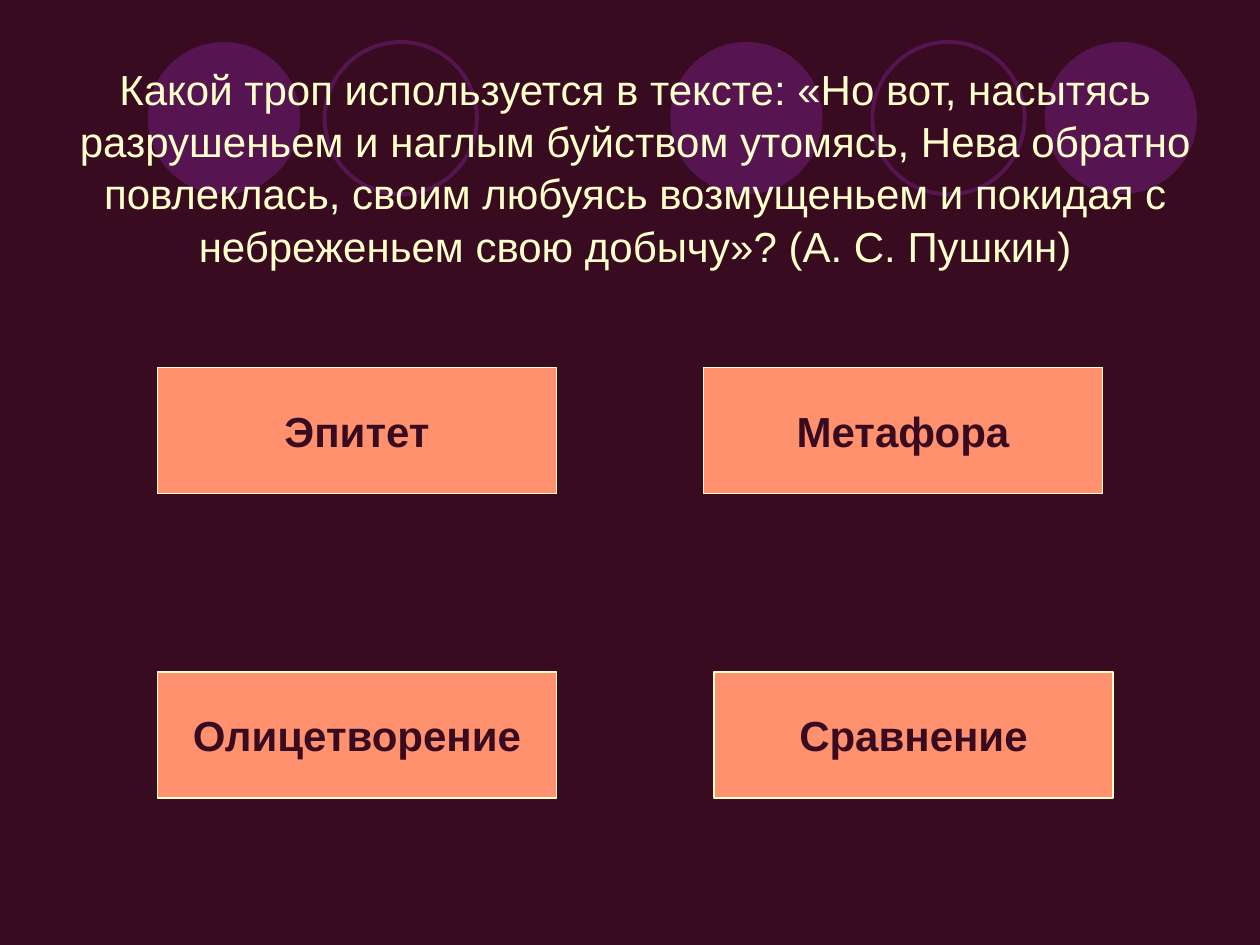
"""Build a quiz slide asking which trope a passage by Pushkin uses."""
from pptx import Presentation
from pptx.dml.color import RGBColor
from pptx.enum.shapes import MSO_SHAPE
from pptx.enum.text import MSO_ANCHOR, MSO_AUTO_SIZE, PP_ALIGN
from pptx.util import Pt

OVAL, RECTANGLE = MSO_SHAPE.OVAL, MSO_SHAPE.RECTANGLE
MIDDLE, CENTER = MSO_ANCHOR.MIDDLE, PP_ALIGN.CENTER
NO_AUTOFIT = MSO_AUTO_SIZE.NONE

COLORS = {
    "background": "390B20",
    "circle": "561450",
    "answer": "FF916F",
    "light": "FFFFCC",
}


def color(name):
    return RGBColor.from_string(COLORS[name])


def write(shape, text, color_name, bold):
    frame = shape.text_frame
    frame.text = text
    frame.auto_size = NO_AUTOFIT
    frame.vertical_anchor = MIDDLE
    paragraph = frame.paragraphs[0]
    paragraph.alignment = CENTER
    font = paragraph.runs[0].font
    font.name = "Arial"
    font.size = Pt(24)
    font.bold = bold
    font.color.rgb = color(color_name)


prs = Presentation()
prs.slide_width, prs.slide_height = Pt(720), Pt(540)
slide = prs.slides.add_slide(prs.slide_layouts[5])
slide.background.fill.solid()
slide.background.fill.fore_color.rgb = color("background")

circles = [(383, True), (597, True), (84.5, True), (498.5, False), (185.5, False)]
for left, filled in circles:
    circle = slide.shapes.add_shape(OVAL, Pt(left), Pt(24), Pt(87), Pt(87))
    circle.shadow.inherit = False
    if filled:
        circle.fill.solid()
        circle.fill.fore_color.rgb = color("circle")
        circle.line.fill.background()
    else:
        circle.fill.background()
        circle.line.color.rgb = color("circle")
        circle.line.width = Pt(2.25)

question = slide.shapes.title
slide.shapes.element.append(question.element)
question.left, question.top = Pt(36), Pt(21.75)
question.width, question.height = Pt(654), Pt(146)
write(
    question,
    "Какой троп используется в тексте: «Но вот, насытясь разрушеньем и наглым "
    "буйством утомясь, Нева обратно повлеклась, своим любуясь возмущеньем и "
    "покидая с небреженьем свою добычу»? (А. С. Пушкин)",
    "light",
    False,
)
question.text_frame.word_wrap = True
question.text_frame.paragraphs[0].line_spacing = 1.04

answers = [
    ("Эпитет", 90, 210),
    ("Метафора", 402, 210),
    ("Олицетворение", 90, 384),
    ("Сравнение", 408, 384),
]
for trope, left, top in answers:
    answer = slide.shapes.add_shape(RECTANGLE, Pt(left), Pt(top), Pt(228), Pt(72))
    answer.shadow.inherit = False
    answer.fill.solid()
    answer.fill.fore_color.rgb = color("answer")
    answer.line.color.rgb = color("light")
    answer.line.width = Pt(0.75)
    write(answer, trope, "background", True)
    answer.text_frame.word_wrap = False

prs.save("out.pptx")
